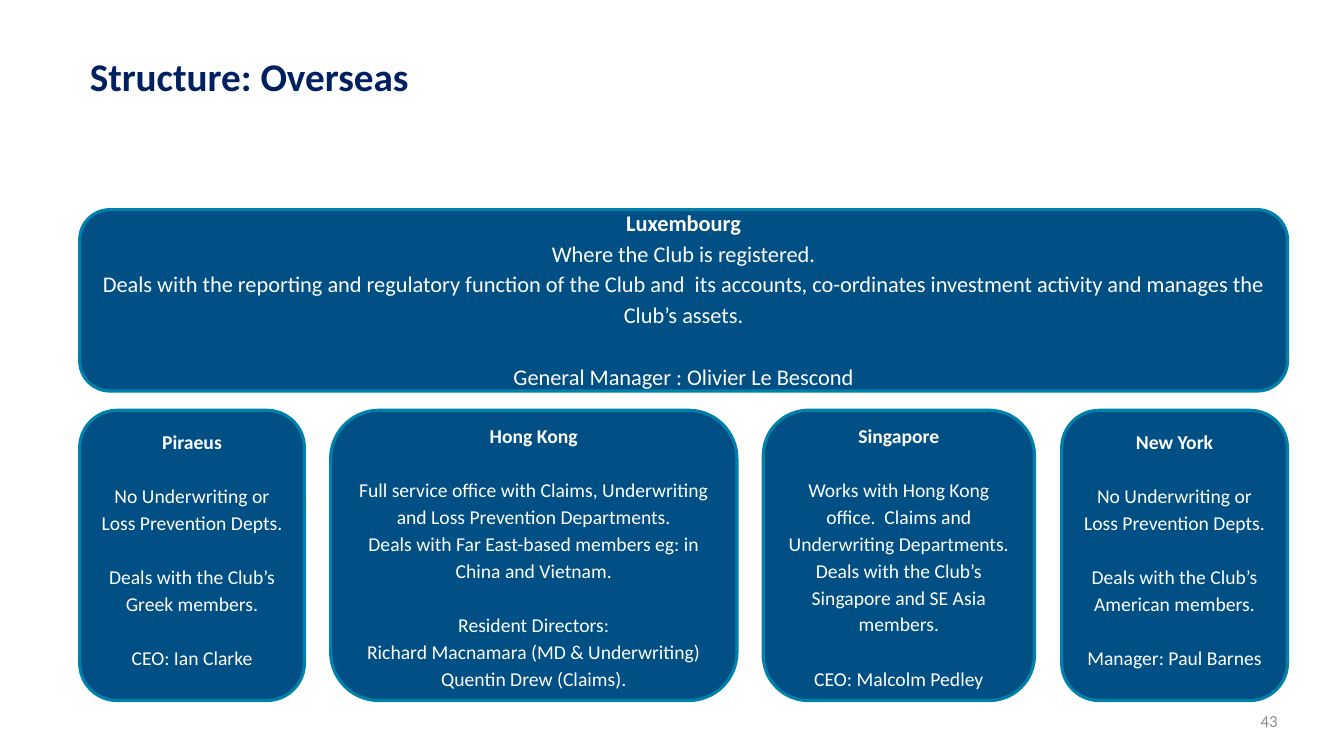
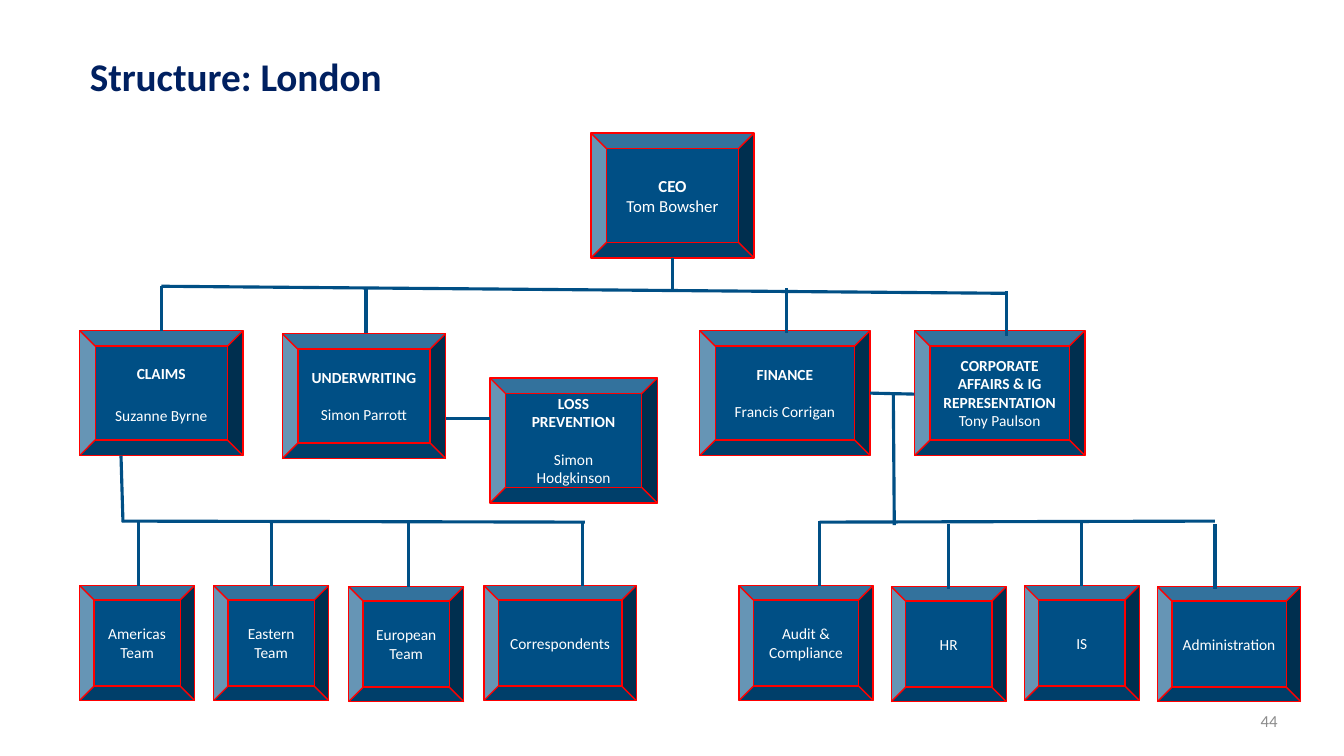
from pptx import Presentation
from pptx.dml.color import RGBColor
from pptx.enum.shapes import MSO_CONNECTOR, MSO_SHAPE
from pptx.enum.text import MSO_ANCHOR, PP_ALIGN
from pptx.oxml.ns import qn
from pptx.util import Inches, Pt
from lxml.etree import SubElement

FONT = "Calibri"
BLUE = "004F85"
CARD_EDGE = "0081AB"
BOX_EDGE = "FF0000"
NAVY = "002060"
GREY = "8C8C8C"
WHITE = "FFFFFF"

LEFT = 0.79
CARD_TOP = 4.07
CARD_HEIGHT = 2.88
CARD_SPACING = 1.14
BOX_HEIGHT = 1.24
TEAM_HEIGHT = 1.14
DROP_HEIGHT = 0.64
LINE_HEIGHT = 1.22  # natural line height of the font, in ems


def colour(hex_value):
    return RGBColor.from_string(hex_value)


def add_run(paragraph, text, size, hex_value, bold=False):
    run = paragraph.add_run()
    run.text = text
    run.font.name = FONT
    run.font.size = Pt(size)
    run.font.bold = bold
    run.font.color.rgb = colour(hex_value)


def write_groups(shape, groups, size, spacing=1.0, heading=True):
    """Write groups of centred lines, one line of space between groups."""
    frame = shape.text_frame
    frame.word_wrap = True
    frame.vertical_anchor = MSO_ANCHOR.MIDDLE
    for group_index, group in enumerate(groups):
        for line_index, line in enumerate(group):
            first = group_index == line_index == 0
            paragraph = frame.paragraphs[0] if first else frame.add_paragraph()
            paragraph.alignment = PP_ALIGN.CENTER
            paragraph.line_spacing = spacing
            if group_index and not line_index:
                paragraph.space_before = Pt(round(size * LINE_HEIGHT * spacing, 1))
            add_run(paragraph, line, size, WHITE, bold=first and heading)


def add_panel(slide, kind, left, top, width, height, edge, edge_width):
    shape = slide.shapes.add_shape(
        kind, Inches(left), Inches(top), Inches(width), Inches(height))
    shape.shadow.inherit = False
    shape.fill.solid()
    shape.fill.fore_color.rgb = colour(BLUE)
    shape.line.color.rgb = colour(edge)
    shape.line.width = Pt(edge_width)
    return shape


def add_card(slide, left, top, width, height, groups, size, bottom_inset=0.05):
    card = add_panel(slide, MSO_SHAPE.ROUNDED_RECTANGLE,
                     left, top, width, height, CARD_EDGE, 2.25)
    card.text_frame.margin_bottom = Inches(bottom_inset)
    write_groups(card, groups, size, CARD_SPACING)


def add_box(slide, left, top, width, height, groups, size=11, spacing=1.0, heading=True):
    box = add_panel(slide, MSO_SHAPE.BEVEL, left, top, width, height, BOX_EDGE, 1)
    write_groups(box, groups, size, spacing, heading)


def add_line(slide, x1, y1, x2, y2):
    line = slide.shapes.add_connector(
        MSO_CONNECTOR.STRAIGHT, Inches(x1), Inches(y1), Inches(x2), Inches(y2))
    line.line.color.rgb = colour(BLUE)
    line.line.width = Pt(2.25)
    SubElement(line._element.spPr, qn("a:effectLst"))


def add_titled_slide(presentation, title_text, number):
    slide = presentation.slides.add_slide(presentation.slide_layouts[5])
    title = slide.shapes.title
    title.left, title.top = Inches(LEFT), Inches(0.39)
    title.width, title.height = Inches(8.66), Inches(0.79)
    title.text_frame.vertical_anchor = MSO_ANCHOR.MIDDLE
    paragraph = title.text_frame.paragraphs[0]
    paragraph.alignment = PP_ALIGN.LEFT
    paragraph.line_spacing = 0.9
    add_run(paragraph, title_text, 28, NAVY, bold=True)

    footer = slide.shapes.add_textbox(
        Inches(9.56), Inches(6.95), Inches(3.21), Inches(0.4))
    footer.text_frame.word_wrap = True
    footer.text_frame.vertical_anchor = MSO_ANCHOR.MIDDLE
    paragraph = footer.text_frame.paragraphs[0]
    paragraph.alignment = PP_ALIGN.RIGHT
    add_run(paragraph, str(number), 12, GREY)
    return slide


def build_overseas(presentation):
    slide = add_titled_slide(presentation, "Structure: Overseas", 43)
    luxembourg = [
        ["Luxembourg",
         "Where the Club is registered.",
         "Deals with the reporting and regulatory function of the Club and  its accounts, "
         "co-ordinates investment activity and manages the Club’s assets."],
        ["General Manager : Olivier Le Bescond"],
    ]
    add_card(slide, LEFT, 2.08, 11.98, 1.8, luxembourg, 16, bottom_inset=0.1)

    no_underwriting = ["No Underwriting or Loss Prevention Depts."]
    offices = [
        (LEFT, 2.23, 0.19, [
            ["Piraeus"], no_underwriting,
            ["Deals with the Club’s Greek members."],
            ["CEO: Ian Clarke"]]),
        (3.28, 4.03, 0.05, [
            ["Hong Kong"],
            ["Full service office with Claims, Underwriting and Loss Prevention Departments.",
             "Deals with Far East-based members eg: in China and Vietnam."],
            ["Resident Directors:",
             "Richard Macnamara (MD & Underwriting)",
             "Quentin Drew (Claims)."]]),
        (7.57, 2.69, 0.05, [
            ["Singapore"],
            ["Works with Hong Kong office.  Claims and Underwriting Departments.",
             "Deals with the Club’s Singapore and SE Asia members."],
            ["CEO: Malcolm Pedley"]]),
        (10.53, 2.24, 0.19, [
            ["New York"], no_underwriting,
            ["Deals with the Club’s American members."],
            ["Manager: Paul Barnes"]]),
    ]
    for left, width, bottom_inset, groups in offices:
        add_card(slide, left, CARD_TOP, width, CARD_HEIGHT, groups, 14, bottom_inset)


def build_london(presentation):
    slide = add_titled_slide(presentation, "Structure: London", 44)
    add_box(slide, 5.86, 1.32, 1.62, BOX_HEIGHT, [["CEO", "Tom Bowsher"]], size=12)

    departments = [
        (LEFT, 3.28, 1.62, CARD_SPACING, [["CLAIMS"], ["Suzanne Byrne"]]),
        (2.8, 3.31, 1.62, 1.0, [["UNDERWRITING"], ["Simon Parrott"]]),
        (4.86, 3.75, 1.66, 1.0, [["LOSS PREVENTION"], ["Simon Hodgkinson"]]),
        (6.94, 3.28, 1.69, 1.0, [["FINANCE"], ["Francis Corrigan"]]),
        (9.07, 3.28, 1.69, 1.0,
         [["CORPORATE AFFAIRS & IG REPRESENTATION", "Tony Paulson"]]),
    ]
    for left, top, width, spacing, groups in departments:
        add_box(slide, left, top, width, BOX_HEIGHT, groups, spacing=spacing)

    teams = [
        (LEFT, 5.81, 1.14, "Americas Team"),
        (2.12, 5.81, 1.14, "Eastern Team"),
        (3.46, 5.82, 1.14, "European Team"),
        (4.8, 5.81, 1.51, "Correspondents"),
        (7.33, 5.81, 1.33, "Audit & Compliance"),
        (8.84, 5.82, 1.14, "HR"),
        (10.16, 5.81, 1.14, "IS"),
        (11.48, 5.82, 1.42, "Administration"),
    ]
    for left, top, width, name in teams:
        add_box(slide, left, top, width, TEAM_HEIGHT, [[name]], heading=False)

    department_bar = (1.6, 2.84, 9.98, 2.91)
    claims_bar = (1.21, 5.17, 5.8, 5.18)
    finance_bar = (8.13, 5.18, 12.05, 5.17)
    ceo_stem = (6.67, 2.56, 6.67, 2.88)
    claims_stem = (1.2, 4.52, 1.22, 5.18)
    finance_stem = (8.86, 3.9, 8.87, 5.21)
    underwriting_link = (4.42, 4.15, 4.86, 4.15)
    finance_link = (8.63, 3.9, 9.07, 3.91)
    for ends in (department_bar, claims_bar, finance_bar, ceo_stem, claims_stem,
                 finance_stem, underwriting_link, finance_link):
        add_line(slide, *ends)

    for x, top in ((1.6, 2.84), (3.63, 2.86), (7.8, 2.86), (9.98, 2.89)):
        add_line(slide, x, top, x, top + 0.44)
    for x, top in ((1.37, 5.17), (2.69, 5.17), (4.05, 5.18), (5.78, 5.17),
                   (8.13, 5.17), (9.41, 5.2), (10.73, 5.17), (12.05, 5.2)):
        add_line(slide, x, top, x, top + DROP_HEIGHT)


def main():
    presentation = Presentation()
    presentation.slide_width = Inches(13.33)
    presentation.slide_height = Inches(7.5)
    build_overseas(presentation)
    build_london(presentation)
    presentation.save("out.pptx")


if __name__ == "__main__":
    main()
